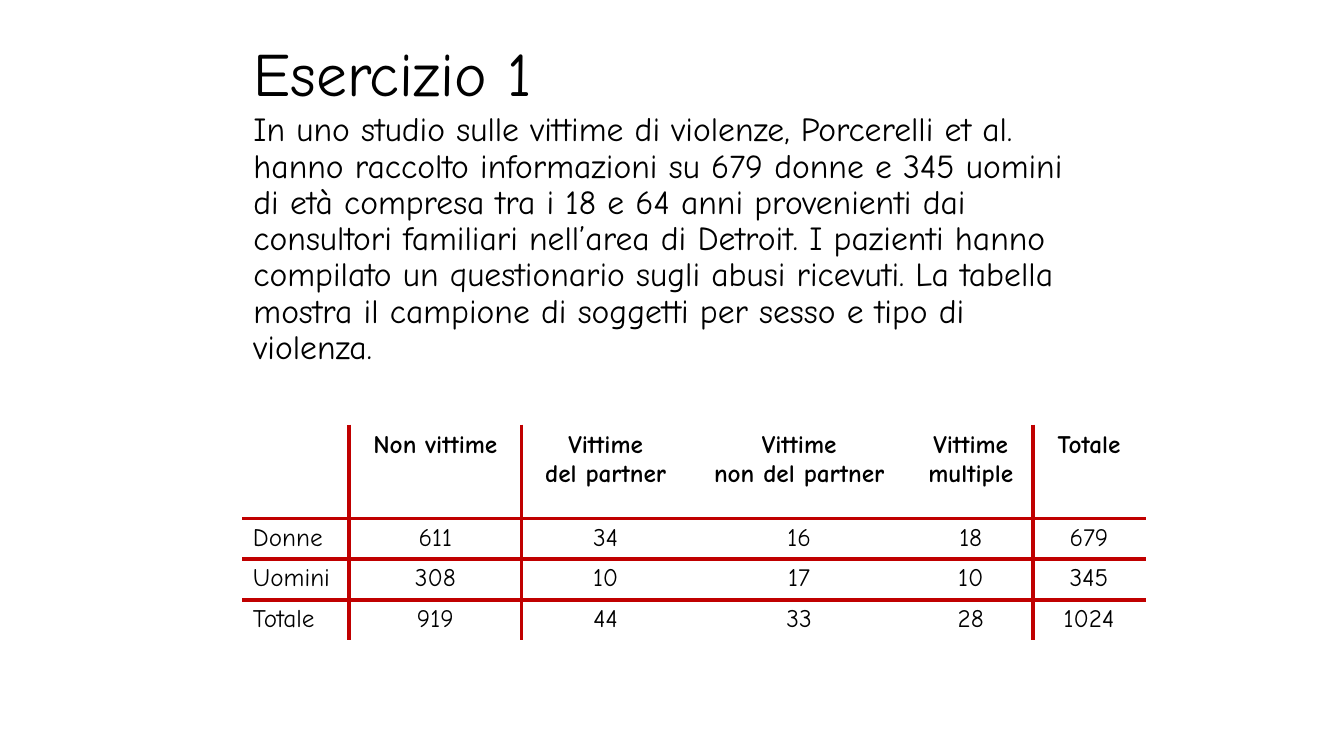
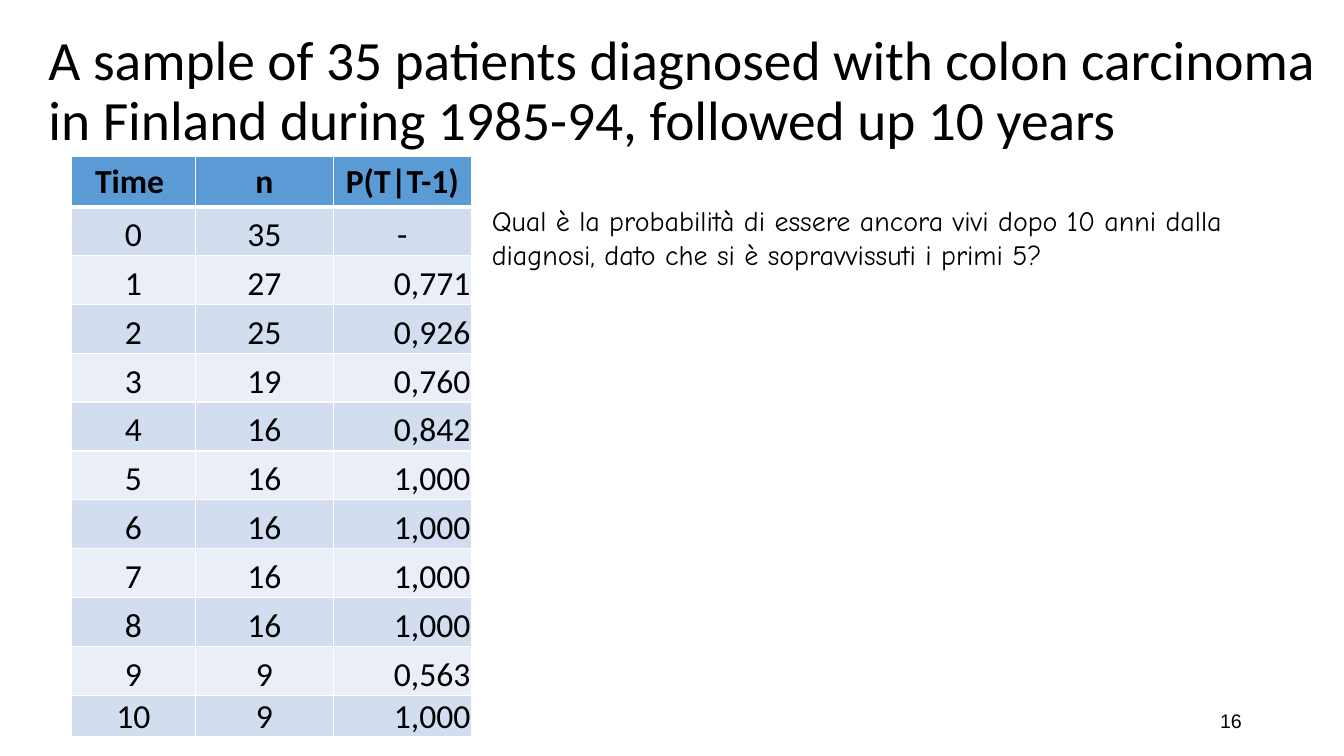
from itertools import product

from lxml.etree import SubElement
from pptx import Presentation
from pptx.dml.color import RGBColor
from pptx.enum.text import MSO_ANCHOR, MSO_AUTO_SIZE, PP_ALIGN
from pptx.oxml.ns import qn
from pptx.util import Pt

COLORS = {
    "text": "000000",
    "rule": "C00000",
    "grid": "FFFFFF",
    "header": "5B9BD5",
    "odd": "D2DEEF",
    "even": "EAEFF7",
}
HAND, PLAIN, NUMBER = "Comic Neue", "Calibri", "Arial"
LEFT, CENTER, RIGHT = PP_ALIGN.LEFT, PP_ALIGN.CENTER, PP_ALIGN.RIGHT
CELL_INSETS = (7.2, 3.6, 7.2, 3.6)
TIGHT_INSETS = (0.7, 0.7, 0.7, 0)

VIOLENCE_ROWS = [
    ["", "Non vittime", "Vittime\ndel partner", "Vittime\nnon del partner", "Vittime\nmultiple", "Totale"],
    ["Donne", "611", "34", "16", "18", "679"],
    ["Uomini", "308", "10", "17", "10", "345"],
    ["Totale", "919", "44", "33", "28", "1024"],
]
SURVIVORS = [35, 27, 25, 19, 16, 16, 16, 16, 16, 9, 9]
PROBABILITIES = ["-", "0,771", "0,926", "0,760", "0,842", "1,000", "1,000", "1,000", "1,000", "0,563", "1,000"]


def write(frame, text, font=HAND, size=18, bold=False, align=LEFT, line=None, before=None):
    frame.word_wrap = True
    for index, words in enumerate(text.split("\n")):
        paragraph = frame.add_paragraph() if index else frame.paragraphs[0]
        paragraph.alignment = align
        if line:
            paragraph.line_spacing = line
        if before is not None:
            paragraph.space_before = Pt(before)
        run = paragraph.add_run()
        run.text = words
        run.font.name = font
        run.font.size = Pt(size)
        run.font.bold = bold
        run.font.color.rgb = RGBColor.from_string(COLORS["text"])


def add_title(slide, box, text, **style):
    title = slide.shapes.title
    title.left, title.top, title.width, title.height = map(Pt, box)
    title.text_frame.auto_size = MSO_AUTO_SIZE.NONE
    title.text_frame.vertical_anchor = MSO_ANCHOR.MIDDLE
    write(title.text_frame, text, line=0.9, **style)


def add_text(slide, box, text, anchor=MSO_ANCHOR.TOP, **style):
    frame = slide.shapes.add_textbox(*map(Pt, box)).text_frame
    frame.vertical_anchor = anchor
    write(frame, text, **style)


def add_grid(slide, left, top, widths, heights):
    box = map(Pt, (left, top, sum(widths), sum(heights)))
    table = slide.shapes.add_table(len(heights), len(widths), *box).table
    table.first_row = table.horz_banding = False
    for column, width in zip(table.columns, widths):
        column.width = Pt(width)
    for row, height in zip(table.rows, heights):
        row.height = Pt(height)
    return table


def format_cell(cell, text, borders, fill=None, insets=CELL_INSETS, anchor=MSO_ANCHOR.TOP, **style):
    properties = cell._tc.get_or_add_tcPr()
    for side in "LRTB":
        if side in borders:
            color, width = borders[side]
            line = SubElement(properties, qn(f"a:ln{side}"), w=str(Pt(width)))
            solid = SubElement(line, qn("a:solidFill"))
            SubElement(solid, qn("a:srgbClr"), val=COLORS[color])
    if fill:
        cell.fill.solid()
        cell.fill.fore_color.rgb = RGBColor.from_string(COLORS[fill])
    else:
        cell.fill.background()
    cell.margin_left, cell.margin_top, cell.margin_right, cell.margin_bottom = map(Pt, insets)
    cell.vertical_anchor = anchor
    if text:
        write(cell.text_frame, text, **style)


def add_violence_table(slide, left, top):
    widths = [75.9, 123.1, 120.3, 156.2, 88.9, 80]
    heights = [66.5, 29.2, 29.2, 29.2]
    table = add_grid(slide, left, top, widths, heights)
    ruled_columns, ruled_rows = {1, 2, 5}, {1, 2, 3}
    for row, column in product(range(len(heights)), range(len(widths))):
        ruled = {
            "L": column in ruled_columns,
            "R": column + 1 in ruled_columns,
            "T": row in ruled_rows,
            "B": row + 1 in ruled_rows,
        }
        borders = {side: ("rule", 3) if red else ("grid", 1) for side, red in ruled.items()}
        align = CENTER if column or not row else LEFT
        format_cell(table.cell(row, column), VIOLENCE_ROWS[row][column], borders, bold=row == 0, align=align)


def add_survival_table(slide, left, top):
    records = [["Time ", "n", "P(T|T-1)"]]
    for time, (count, probability) in enumerate(zip(SURVIVORS, PROBABILITIES)):
        records.append([str(time), str(count), probability])
    table = add_grid(slide, left, top, [88.4, 98.6, 98.6], [36] + [34.9] * 10 + [29.4])
    for row, record in enumerate(records):
        for column, text in enumerate(record):
            borders = {side: ("grid", 1) for side in "LRTB"}
            if row == 0:
                borders["B"] = ("grid", 3)
                look = {"fill": "header", "bold": True}
            else:
                if row == 1:
                    borders["T"] = ("grid", 3)
                look = {
                    "fill": "odd" if row % 2 else "even",
                    "insets": TIGHT_INSETS,
                    "anchor": MSO_ANCHOR.BOTTOM,
                }
            align = RIGHT if column == 2 and row > 1 else CENTER
            format_cell(table.cell(row, column), text, borders, font=PLAIN, size=24, align=align, **look)


def build_exercise(slide):
    add_title(slide, (174, 9.4, 612, 90), "Esercizio 1", size=44)
    add_text(
        slide,
        (174, 77, 612, 201.6),
        "In uno studio sulle vittime di violenze, Porcerelli et al. hanno raccolto informazioni su "
        "679 donne e 345 uomini di età compresa tra i 18 e 64 anni provenienti dai consultori familiari "
        "nell’area di Detroit. I pazienti hanno compilato un questionario sugli abusi ricevuti. "
        "La tabella mostra il campione di soggetti per sesso e tipo di violenza.",
        size=24,
        line=0.9,
        before=10,
    )
    add_violence_table(slide, 173.5, 303.8)


def build_survival(slide):
    add_title(
        slide,
        (27.4, 4.3, 932.4, 123.8),
        "A sample of 35 patients diagnosed with colon carcinoma in Finland during 1985-94, "
        "followed up 10 years",
        font=PLAIN,
        size=39.6,
    )
    add_text(slide, (678.2, 500.4, 216, 28.8), "16", anchor=MSO_ANCHOR.MIDDLE, font=NUMBER, size=14, align=RIGHT)
    add_text(
        slide,
        (344.2, 141.8, 573.8, 55.4),
        "Qual è la probabilità di essere ancora vivi dopo 10 anni dalla diagnosi, "
        "dato che si è sopravvissuti i primi 5?",
        size=20,
    )
    add_survival_table(slide, 51.1, 111.6)


def main():
    presentation = Presentation()
    presentation.slide_width, presentation.slide_height = Pt(960), Pt(540)
    title_only = presentation.slide_layouts[5]
    for build in (build_exercise, build_survival):
        build(presentation.slides.add_slide(title_only))
    presentation.save("out.pptx")


if __name__ == "__main__":
    main()
